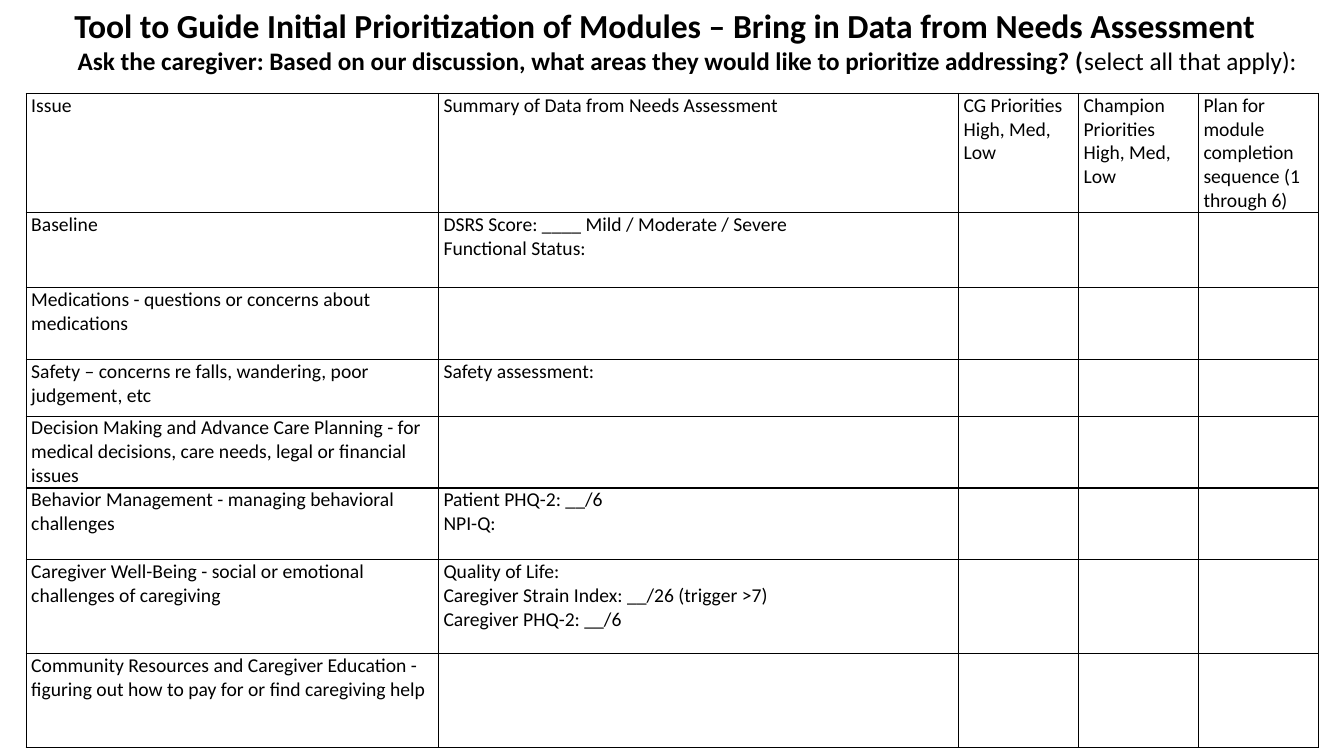
from pptx import Presentation
from pptx.dml.color import RGBColor
from pptx.enum.text import MSO_ANCHOR, PP_ALIGN
from pptx.oxml import parse_xml
from pptx.oxml.ns import nsdecls
from pptx.util import Pt

BLACK = "000000"
HEADING = [
    [("Tool to Guide Initial Prioritization of Modules – Bring in Data from Needs Assessment", 24, True)],
    [
        (" ", 10.5, False),
        ("Ask the caregiver: Based on our discussion, what areas they would like to prioritize addressing? (", 18, True),
        ("select all that apply):", 18, False),
    ],
]
COLUMN_WIDTHS = [294.5, 371.5, 85.7, 85.7, 85.7]
# Each row: height, then the lines of each filled cell
ROWS = [
    (85.2, ["Issue"], ["Summary of Data from Needs Assessment"],
     ["CG Priorities", "High, Med, Low"], ["Champion Priorities", "High, Med, Low"],
     ["Plan for module completion sequence (1 through 6)"]),
    (53.5, ["Baseline"], ["DSRS Score: ____ Mild / Moderate / Severe", "Functional Status:"]),
    (51.3, ["Medications - questions or concerns about medications"]),
    (40.6, ["Safety – concerns re falls, wandering, poor judgement, etc"], ["Safety assessment:"]),
    (51.2, ["Decision Making and Advance Care Planning - for medical decisions, care needs, legal or financial issues"]),
    (51.2, ["Behavior Management - managing behavioral challenges"], ["Patient PHQ-2: __/6", "NPI-Q:"]),
    (67.1, ["Caregiver Well-Being - social or emotional challenges of caregiving"],
     ["Quality of Life:", "Caregiver Strain Index: __/26 (trigger >7)", "Caregiver PHQ-2: __/6"]),
    (67.1, ["Community Resources and Caregiver Education -",
            "figuring out how to pay for or find caregiving help"]),
]
CELL_FORMAT = {
    "margin_left": Pt(3.6), "margin_right": Pt(3.6), "margin_top": 0, "margin_bottom": 0,
    "vertical_anchor": MSO_ANCHOR.TOP,
}
TABLE_FORMAT = {"first_row": False, "horz_banding": False}


def color(value):
    return RGBColor.from_string(value)


def apply(target, values):
    for name, value in values.items():
        setattr(target, name, value)


def write(frame, paragraphs):
    """Fill a text frame with paragraphs of (text, size, bold) spans."""
    for index, spans in enumerate(paragraphs):
        para = frame.add_paragraph() if index else frame.paragraphs[0]
        para.alignment = PP_ALIGN.LEFT
        for text, size, bold in spans:
            span = para.add_run()
            span.text = text
            apply(span.font, {"name": "Calibri", "size": Pt(size), "bold": bold})
            span.font.color.rgb = color(BLACK)


def add_borders(cell):
    properties = cell._tc.get_or_add_tcPr()
    for position, side in enumerate("LRTB"):
        properties.insert(position, parse_xml(
            f'<a:ln{side} {nsdecls("a")} w="{Pt(1)}"><a:solidFill>'
            f'<a:srgbClr val="{BLACK}"/></a:solidFill></a:ln{side}>'))


def add_heading(page):
    box = page.shapes.add_textbox(Pt(46), 0, Pt(895), Pt(58.3))
    box.text_frame.word_wrap = True
    write(box.text_frame, HEADING)


def add_priority_table(page):
    heights = [row[0] for row in ROWS]
    table = page.shapes.add_table(
        len(ROWS), len(COLUMN_WIDTHS), Pt(18.7), Pt(66.8),
        Pt(sum(COLUMN_WIDTHS)), Pt(sum(heights))).table
    apply(table, TABLE_FORMAT)
    for column, width in zip(table.columns, COLUMN_WIDTHS):
        column.width = Pt(width)
    for row, (height, *contents) in zip(table.rows, ROWS):
        row.height = Pt(height)
        for cell in row.cells:
            apply(cell, CELL_FORMAT)
            cell.fill.background()
            add_borders(cell)
        for cell, lines in zip(row.cells, contents):
            write(cell.text_frame, [[(line, 14, False)] for line in lines])


def main():
    deck = Presentation()
    apply(deck, {"slide_width": Pt(960), "slide_height": Pt(540)})
    page = deck.slides.add_slide(deck.slide_layouts[6])
    add_priority_table(page)
    add_heading(page)
    deck.save("out.pptx")


if __name__ == "__main__":
    main()
